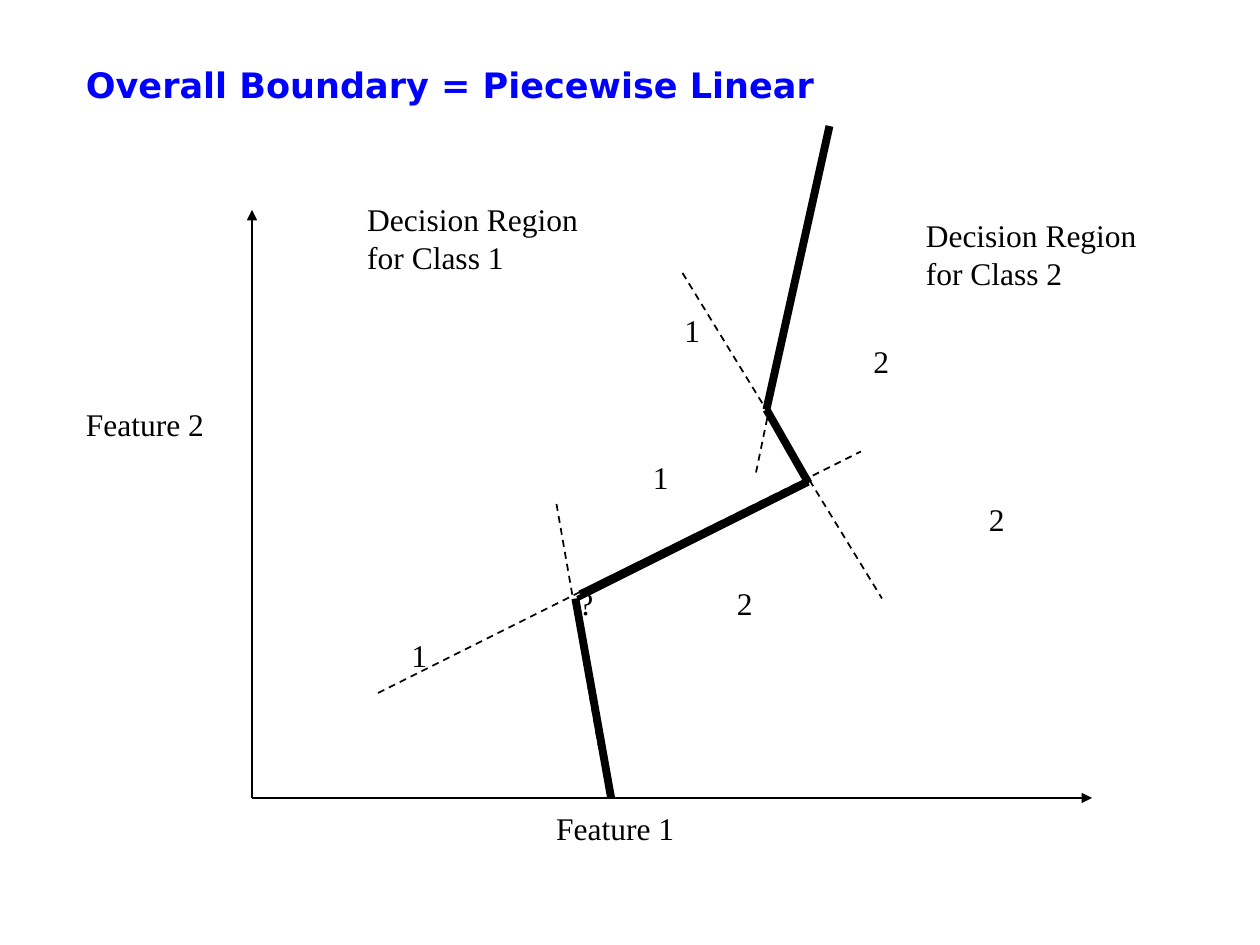
from lxml.etree import SubElement
from pptx import Presentation
from pptx.dml.color import RGBColor
from pptx.enum.dml import MSO_LINE
from pptx.enum.shapes import MSO_CONNECTOR
from pptx.enum.text import MSO_ANCHOR
from pptx.oxml.ns import qn
from pptx.util import Inches, Pt

# The slide is a grid of 120 columns by 90 rows, twelve cells to the inch.
COLS, ROWS, CELL = 120, 90, Inches(1) / 12
COLORS = {"ink": "000000", "title": "0000FF"}
TITLE_FONT = {"name": "DejaVu Sans", "size": Pt(20), "bold": True}
BODY_FONT = {"name": "Times New Roman", "size": Pt(18)}
LINE_HEIGHT, PADDING = 3.6, 1.2

TITLE = ("Overall Boundary = Piecewise Linear", 7, 4, 102, 8)

# text, column, row, width
LABELS = [
    ("1", 61, 43, 4), ("1", 64, 29, 4), ("1", 38, 60, 4),
    ("2", 93, 47, 4), ("2", 82, 32, 4), ("2", 69, 55, 4),
    ("?", 54, 55, 3.7),
    ("Feature 1", 51.8, 76.5, 13.7),
    ("Feature 2", 7, 38, 13.7),
    ("Decision Region\nfor Class 1", 33.8, 18.5, 23.3),
    ("Decision Region\nfor Class 2", 87, 20, 23.3),
]

# start column, start row, end column, end row
AXES = [(24, 76, 24, 20), (24, 76, 104, 76)]
LINEAR_BOUNDARIES = [(72, 45, 78, 16), (65, 26, 84, 57),
                     (36, 66, 82, 43), (53, 48, 57, 71)]
DOUBLED_SEGMENT = [(55, 57, 77, 46), (55.2, 56.5, 77.2, 45.6)]
THICK_SEGMENTS = [(54.8, 57, 58.2, 76), (77, 46, 73, 39), (73, 39, 79, 12)]

LINE_GROUPS = [
    (AXES, {"width": Pt(1)}, True),
    (LINEAR_BOUNDARIES, {"width": Pt(1), "dash_style": MSO_LINE.DASH}, False),
    (DOUBLED_SEGMENT, {"width": Pt(3)}, False),
    (THICK_SEGMENTS, {"width": Pt(4.5)}, False),
]


def cells(*counts):
    return [round(n * CELL) for n in counts]


def apply(target, formats):
    for name, value in formats.items():
        setattr(target, name, value)


def add_text(slide, text, box, font, color, **frame):
    tf = slide.shapes.add_textbox(*cells(*box)).text_frame
    apply(tf, frame)
    tf.text = text
    for p in tf.paragraphs:
        for r in p.runs:
            apply(r.font, font)
            r.font.color.rgb = RGBColor.from_string(COLORS[color])


def add_line(slide, ends, formats, arrow):
    sp = slide.shapes.add_connector(MSO_CONNECTOR.STRAIGHT, *cells(*ends))
    sp.line.color.rgb = RGBColor.from_string(COLORS["ink"])
    apply(sp.line, formats)
    if arrow:
        SubElement(sp.line._get_or_add_ln(), qn("a:tailEnd"), type="triangle")
    SubElement(sp._element.spPr, qn("a:effectLst"))


def main():
    prs = Presentation()
    prs.slide_width, prs.slide_height = cells(COLS, ROWS)
    slide = prs.slides.add_slide(prs.slide_layouts[6])

    title, *box = TITLE
    add_text(slide, title, box, TITLE_FONT, "title",
             word_wrap=True, vertical_anchor=MSO_ANCHOR.MIDDLE)
    for text, col, row, width in LABELS:
        height = LINE_HEIGHT * len(text.split("\n")) + PADDING
        add_text(slide, text, (col, row, width, height), BODY_FONT, "ink",
                 word_wrap=False)
    for lines, formats, arrow in LINE_GROUPS:
        for ends in lines:
            add_line(slide, ends, formats, arrow)

    prs.save("out.pptx")


if __name__ == "__main__":
    main()
